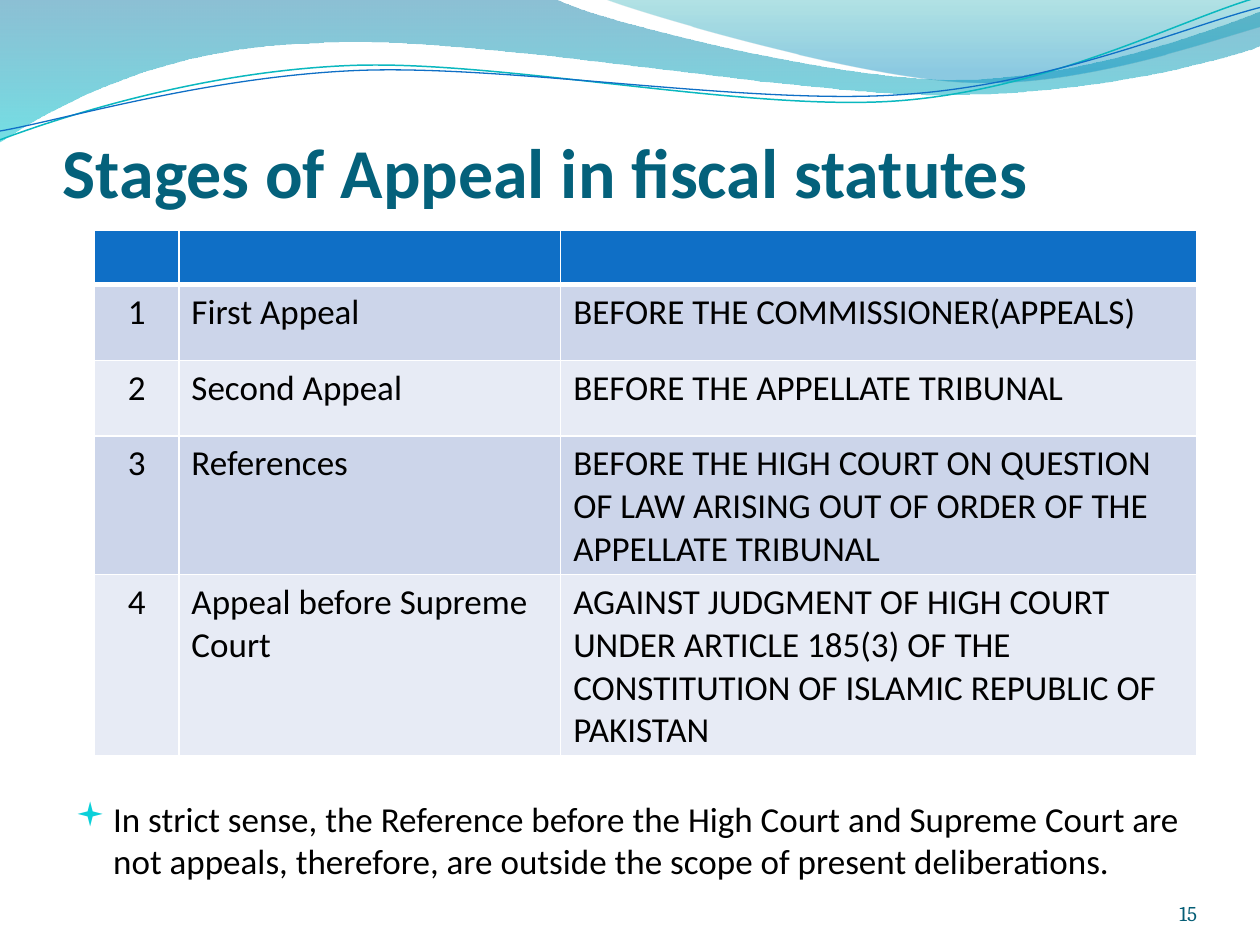
from math import cos, radians, sin

from lxml import etree
from pptx import Presentation
from pptx.dml.color import RGBColor as RGB
from pptx.enum.text import MSO_ANCHOR as Anchor, PP_ALIGN as Align
from pptx.oxml.ns import qn
from pptx.util import Inches, Pt

COLORS = {
    "title": "04617B", "text": "000000", "number": "045D75", "bullet": "0BD0D9",
    "head": "0F6FC6", "odd": "CCD5EA", "even": "E7EBF5", "rule": "FFFFFF",
    "teal": "0AB8BF", "blue": "0F6FC6",
    "deep": "0074A1", "aqua": "00C6CF", "sea": "00A1A9", "sky": "008BBF",
}

# A wave is a list of steps: a pair draws a line, six numbers draw a curve.
BANDS = [
    ([(0, 0), (4.4, -0.01), (4.76, 0.17, 6.64, 0.63, 7.58, 0.63),
      (8.53, 0.63, 9.58, 0.26, 10, 0.09), (10.01, 0.36),
      (9.83, 0.44, 8.7, 0.76, 7.46, 0.75), (6.22, 0.75, 3.82, 0.28, 2.57, 0.34),
      (1.29, 0.36, 0.46, 0.83, -0.01, 1.13), (0, 0)],
     [(0, "deep", 45), (1, "aqua", 55)]),
    ([(4.79, -0.01), (5.09, 0.11, 6.82, 0.62, 7.69, 0.65),
      (8.56, 0.69, 9.61, 0.32, 10, 0.21), (10, 0), (4.79, -0.01)],
     [(0, "sea", 30), (0.8, "sky", 45)]),
]
STROKES = [
    ([(0, 1.11), (0.48, 0.93, 1.58, 0.57, 2.77, 0.52),
      (3.95, 0.47, 5.93, 0.89, 7.13, 0.8), (8.33, 0.71, 9.38, 0.15, 9.98, -0.02)],
     (4.99, 0.57), "teal", 0.85),
    ([(0, 1.04), (0.47, 0.96, 1.64, 0.61, 2.83, 0.56),
      (4.03, 0.51, 5.97, 0.84, 7.17, 0.75), (8.36, 0.67, 9.41, 0.21, 10, 0.06)],
     (5, 0.59), "blue", 0.75),
]
TILT = 2.7

STAGES = [
    ("First Appeal", "BEFORE THE COMMISSIONER(APPEALS)"),
    ("Second Appeal", "BEFORE THE APPELLATE TRIBUNAL"),
    ("References", "BEFORE THE HIGH COURT ON QUESTION OF LAW ARISING OUT OF "
                   "ORDER OF THE APPELLATE TRIBUNAL"),
    ("Appeal before Supreme Court",
     "AGAINST JUDGMENT OF HIGH COURT UNDER ARTICLE 185(3) OF THE "
     "CONSTITUTION OF ISLAMIC REPUBLIC OF PAKISTAN"),
]
NOTE = ("In strict sense, the Reference before the High Court and Supreme Court "
        "are not appeals, therefore, are outside the scope of present deliberations.")


def rgb(name):
    return RGB.from_string(COLORS[name])


def apply(obj, values):
    for name, value in values.items():
        setattr(obj, name, value)


def add_tag(parent, name, **values):
    return etree.SubElement(parent, qn(name), values)


def pairs(step):
    return list(zip(step[::2], step[1::2]))


def turn(steps, mid, angle):
    """Turn all points of a wave clockwise about mid."""
    c, s = cos(radians(angle)), sin(radians(angle))
    return [[v for x, y in pairs(step)
             for v in (mid[0] + (x - mid[0]) * c - (y - mid[1]) * s,
                       mid[1] + (x - mid[0]) * s + (y - mid[1]) * c)]
            for step in steps]


def add_wave(slide, steps, close):
    """Draw all points as lines, then join each curve's three into a Bézier."""
    points = [(Inches(x), Inches(y)) for step in steps for x, y in pairs(step)]
    build = slide.shapes.build_freeform(*points[0])
    build.add_line_segments(points[1:], close=close)
    wave = build.convert_to_shape()
    wave.shadow.inherit = False
    lines = iter(list(wave._element.iter(qn("a:lnTo"))))
    for step in steps[1:]:
        group = [next(lines) for _ in pairs(step)]
        if len(group) == 3:
            curve = etree.Element(qn("a:cubicBezTo"))
            group[0].addprevious(curve)
            for line in group:
                curve.append(line[0])
                line.getparent().remove(line)
    return wave


def add_band(slide, steps, stops):
    band = add_wave(slide, steps, True)
    band.line.fill.background()
    band.fill.gradient()
    band.fill.gradient_angle = 270
    for stop, (place, color, _) in zip(band.fill.gradient_stops, stops):
        stop.position = place
        stop.color.rgb = rgb(color)
    tags = list(band._element.spPr.iter(qn("a:srgbClr")))
    for tag, (_, _, alpha) in zip(tags, stops):
        add_tag(tag, "a:alpha", val=str(alpha * 1000))


def add_stroke(slide, steps, mid, color, width):
    stroke = add_wave(slide, turn(steps, mid, TILT), False)
    stroke.rotation = 360 - TILT
    stroke.fill.background()
    stroke.line.color.rgb = rgb(color)
    stroke.line.width = Pt(width)


def write(para, text, size=20, color="text", font="Calibri", bold=False):
    run = para.add_run()
    run.text = text
    apply(run.font, {"size": Pt(size), "name": font, "bold": bold})
    run.font.color.rgb = rgb(color)


def add_text(slide, box, text, frame=None, **style):
    """Add a wrapped text box and return its paragraph."""
    body = slide.shapes.add_textbox(*map(Inches, box)).text_frame
    apply(body, {"word_wrap": True, **(frame or {})})
    para = body.paragraphs[0]
    write(para, text, **style)
    return para


def hang(para, indent):
    props = para._p.get_or_add_pPr()
    props.set("marL", str(Inches(indent)))
    props.set("indent", str(-Inches(indent)))
    return props


def add_bullet(para, char, indent):
    para.space_before = Pt(4)
    props = hang(para, indent)
    add_tag(add_tag(props, "a:buClr"), "a:srgbClr", val=COLORS["bullet"])
    add_tag(props, "a:buSzPct", val="95000")
    add_tag(props, "a:buFont", typeface="Wingdings")
    add_tag(props, "a:buChar", char=char)


def fill_cell(cell, fill, edges):
    props = cell._tc.get_or_add_tcPr()
    for side, width in edges.items():
        edge = add_tag(props, "a:ln" + side, w=str(Pt(width)))
        add_tag(add_tag(edge, "a:solidFill"), "a:srgbClr", val=COLORS["rule"])
    cell.fill.solid()
    cell.fill.fore_color.rgb = rgb(fill)


def add_stages(slide):
    rows = [("", "", "")] + [(str(i), *row) for i, row in enumerate(STAGES, 1)]
    box = map(Inches, (0.75, 1.83, 8.75, 2.83))
    table = slide.shapes.add_table(len(rows), 3, *box).table
    for col, width in zip(table.columns, (0.67, 3.03, 5.05)):
        col.width = Inches(width)
    for r, row in enumerate(rows):
        table.rows[r].height = Inches(0.6 if r else 0.43)
        fill = "head" if r == 0 else "odd" if r % 2 else "even"
        edges = {"L": 1, "R": 1, "T": 3 if r == 1 else 1, "B": 1 if r else 3}
        for c, text in enumerate(row):
            cell = table.cell(r, c)
            fill_cell(cell, fill, edges)
            if text:
                para = cell.text_frame.paragraphs[0]
                write(para, text)
                para.alignment = Align.LEFT if c else Align.CENTER


def main():
    deck = Presentation()
    apply(deck, {"slide_width": Inches(10), "slide_height": Inches(7.5)})
    slide = deck.slides.add_slide(deck.slide_layouts[6])
    for band in BANDS:
        add_band(slide, *band)
    for stroke in STROKES:
        add_stroke(slide, *stroke)

    flush = {"margin_left": 0, "margin_right": 0, "margin_bottom": 0,
             "vertical_anchor": Anchor.BOTTOM}
    title = add_text(slide, (0.5, 0.92, 9, 0.77), "Stages of Appeal in fiscal statutes",
                     flush, size=40, color="title", bold=True)
    hang(title, 0.56)
    note = add_text(slide, (0.5, 6.28, 9, 0.88), NOTE)
    add_bullet(note, "▪", 0.3)
    add_stages(slide)
    number = add_text(slide, (8.67, 6.95, 0.83, 0.4), "15", {**flush, "margin_top": 0},
                      size=12, color="number", font="Cambria")
    number.alignment = Align.RIGHT
    deck.save("out.pptx")


if __name__ == "__main__":
    main()
